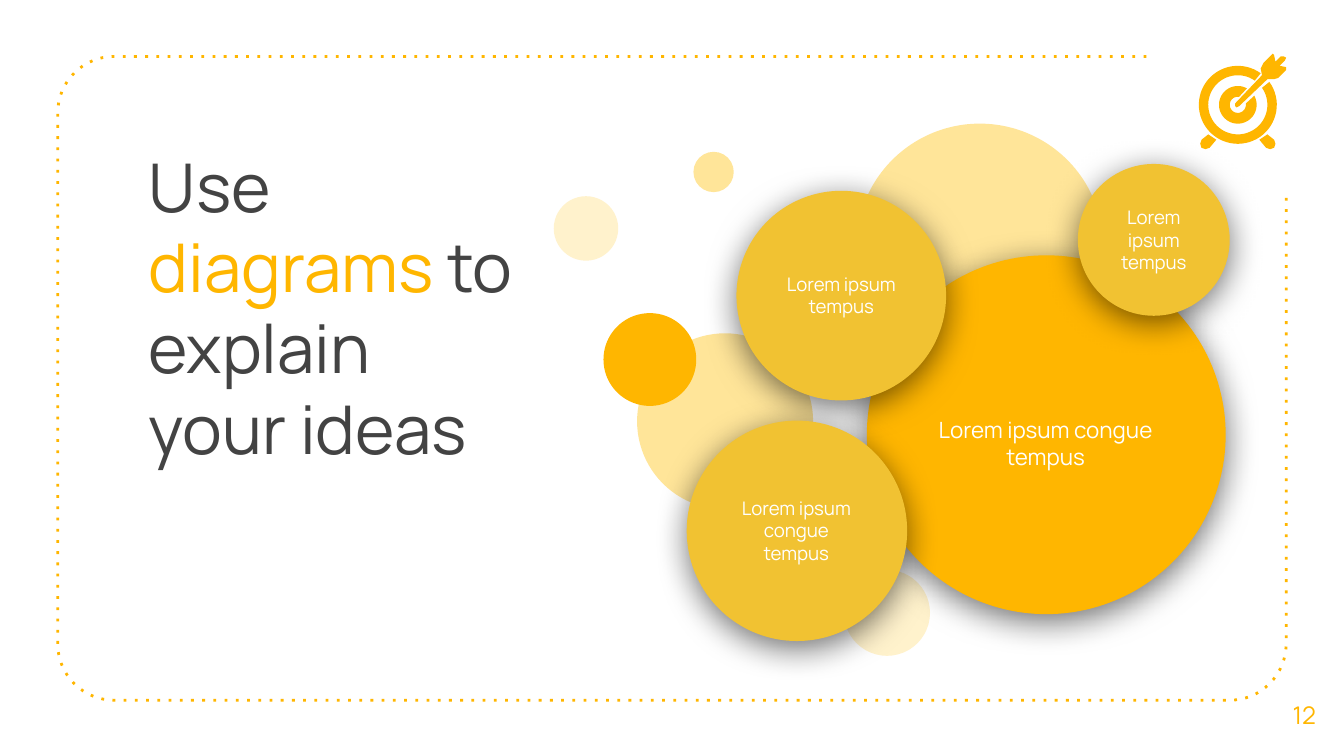
"""Build a slide with overlapping idea bubbles beside a title, inside a dotted frame."""
from dataclasses import dataclass
from math import cos, radians, sin

from lxml import etree
from pptx import Presentation
from pptx.dml.color import RGBColor
from pptx.enum.dml import MSO_LINE
from pptx.enum.shapes import MSO_SHAPE
from pptx.enum.text import MSO_ANCHOR, PP_ALIGN
from pptx.oxml.ns import qn
from pptx.shapes.autoshape import Shape
from pptx.shapes.shapetree import SlideShapes
from pptx.util import Inches, Pt

OVAL = MSO_SHAPE.OVAL
CENTER = PP_ALIGN.CENTER
LEFT = PP_ALIGN.LEFT
TOP = MSO_ANCHOR.TOP
MIDDLE = MSO_ANCHOR.MIDDLE
ROUND_DOT = MSO_LINE.ROUND_DOT

Point = tuple[float, float]


@dataclass(frozen=True)
class Theme:
    font: str = "Manrope"
    amber: str = "FFB600"
    gold: str = "F1C232"
    sand: str = "FFE599"
    cream: str = "FFF2CC"
    dark: str = "434343"
    white: str = "FFFFFF"
    shadow: str = "000000"
    title_size: int = 36
    number_size: int = 13
    large_label: int = 12
    small_label: int = 10


@dataclass(frozen=True)
class Area:
    left: float
    top: float
    width: float
    height: float


@dataclass(frozen=True)
class Span:
    text: str
    color: str


@dataclass(frozen=True)
class Circle:
    left: float
    top: float
    diameter: float
    color: str


@dataclass(frozen=True)
class Bubble:
    circle: Circle
    label: str
    label_area: Area
    label_size: int


@dataclass(frozen=True)
class Ring:
    outer: float
    inner: float
    outer_gap: float
    inner_gap: float


THEME = Theme()

BACKDROP = [
    Circle(6.28, 4.24, 0.64, THEME.cream),
    Circle(4.12, 1.46, 0.48, THEME.cream),
    Circle(4.74, 2.48, 1.31, THEME.sand),
    Circle(6.37, 0.92, 1.84, THEME.sand),
    Circle(4.49, 2.33, 0.69, THEME.amber),
    Circle(5.16, 1.13, 0.3, THEME.sand),
]
BUBBLES = [
    Bubble(Circle(6.45, 1.9, 2.67, THEME.amber), "Lorem ipsum congue tempus",
           Area(6.76, 2.66, 2.04, 1.27), THEME.large_label),
    Bubble(Circle(5.48, 1.42, 1.56, THEME.gold), "Lorem ipsum tempus",
           Area(5.73, 1.68, 1.06, 1.03), THEME.small_label),
    Bubble(Circle(5.11, 3.13, 1.64, THEME.gold), "Lorem ipsum congue tempus",
           Area(5.34, 3.43, 1.17, 1.03), THEME.small_label),
    Bubble(Circle(8.02, 1.22, 1.13, THEME.gold), "Lorem ipsum tempus",
           Area(8.2, 1.41, 0.77, 0.75), THEME.small_label),
]
TARGET_CENTER = (9.21, 0.78)
RINGS = [Ring(0.29, 0.22, 9, 10), Ring(0.14, 0.06, 16, 36)]
FOOT = [(8.99, 1), (8.94, 1.04), (8.93, 1.07), (8.94, 1.1), (8.97, 1.11),
        (9, 1.1), (9.05, 1.04), (9.02, 1.02)]
DART = [(9.47, 0.4), (9.46, 0.41), (9.4, 0.47), (9.38, 0.51), (9.39, 0.56),
        (9.19, 0.77), (9.19, 0.79), (9.2, 0.8), (9.22, 0.79), (9.43, 0.59),
        (9.48, 0.59), (9.51, 0.58), (9.57, 0.52), (9.57, 0.5), (9.52, 0.49),
        (9.56, 0.45), (9.57, 0.43), (9.55, 0.42), (9.53, 0.42), (9.49, 0.46),
        (9.48, 0.41)]


def arc(center: Point, radius: float, start: float, end: float, steps: int) -> list[Point]:
    angles = [radians(start + (end - start) * step / steps) for step in range(steps + 1)]
    return [(center[0] + radius * cos(angle), center[1] + radius * sin(angle)) for angle in angles]


def draw_outline(shapes: SlideShapes, points: list[Point], closed: bool) -> Shape:
    corners = [(Inches(x), Inches(y)) for x, y in points]
    builder = shapes.build_freeform(*corners[0])
    builder.add_line_segments(corners[1:], close=closed)
    outline = builder.convert_to_shape()
    outline.shadow.inherit = False
    return outline


def fill_plain(shape: Shape, color: str) -> None:
    shape.fill.solid()
    shape.fill.fore_color.rgb = RGBColor.from_string(color)
    shape.line.fill.background()


def draw_frame(shapes: SlideShapes) -> None:
    left, top, right, bottom, radius = 0.43, 0.42, 9.57, 5.21, 0.42
    points = [(8.53, top)]
    points += arc((left + radius, top + radius), radius, 270, 180, 16)
    points += arc((left + radius, bottom - radius), radius, 180, 90, 16)
    points += arc((right - radius, bottom - radius), radius, 90, 0, 16)
    points.append((right, 1.46))
    frame = draw_outline(shapes, points, closed=False)
    frame.fill.background()
    frame.line.color.rgb = RGBColor.from_string(THEME.amber)
    frame.line.width = Pt(1.5)
    frame.line.dash_style = ROUND_DOT
    frame.element.spPr.find(".//" + qn("a:prstDash")).set("val", "dot")


def draw_text(shapes: SlideShapes, area: Area, spans: list[Span], size: int,
              align: PP_ALIGN = CENTER, anchor: MSO_ANCHOR = MIDDLE) -> None:
    box = shapes.add_textbox(Inches(area.left), Inches(area.top),
                             Inches(area.width), Inches(area.height))
    frame = box.text_frame
    frame.word_wrap = True
    frame.vertical_anchor = anchor
    frame.margin_left = frame.margin_right = Inches(0.1)
    frame.margin_top = frame.margin_bottom = Inches(0.1)
    para = frame.paragraphs[0]
    para.alignment = align
    para.font.name = THEME.font
    para.font.size = Pt(size)
    for span in spans:
        run = para.add_run()
        run.text = span.text
        run.font.color.rgb = RGBColor.from_string(span.color)


def draw_circle(shapes: SlideShapes, circle: Circle) -> Shape:
    oval = shapes.add_shape(OVAL, Inches(circle.left), Inches(circle.top),
                            Inches(circle.diameter), Inches(circle.diameter))
    oval.shadow.inherit = False
    fill_plain(oval, circle.color)
    return oval


def add_shadow(shape: Shape) -> None:
    effects = shape.element.spPr.find(qn("a:effectLst"))
    shadow = etree.SubElement(effects, qn("a:outerShdw"), blurRad=str(Pt(18)),
                              dist=str(Pt(4)), dir="5400000", algn="bl", rotWithShape="0")
    color = etree.SubElement(shadow, qn("a:srgbClr"), val=THEME.shadow)
    etree.SubElement(color, qn("a:alpha"), val="55000")


def draw_target(shapes: SlideShapes) -> None:
    outlines = [
        arc(TARGET_CENTER, ring.outer, -45 - ring.outer_gap, -405 + ring.outer_gap, 60)
        + arc(TARGET_CENTER, ring.inner, -405 + ring.inner_gap, -45 - ring.inner_gap, 60)
        for ring in RINGS
    ]
    mirrored_foot = [(2 * TARGET_CENTER[0] - x, y) for x, y in FOOT]
    for points in [*outlines, FOOT, mirrored_foot, DART]:
        fill_plain(draw_outline(shapes, points, closed=True), THEME.amber)


def main() -> None:
    deck = Presentation()
    deck.slide_width = Inches(10)
    deck.slide_height = deck.slide_width * 9 // 16
    shapes = deck.slides.add_slide(deck.slide_layouts[6]).shapes
    draw_frame(shapes)
    title = [Span("Use ", THEME.dark), Span("diagrams", THEME.amber),
             Span(" to explain your ideas", THEME.dark)]
    draw_text(shapes, Area(1.01, 0.98, 2.97, 0.94), title, THEME.title_size, LEFT, TOP)
    draw_text(shapes, Area(9.41, 5.02, 0.59, 0.6), [Span("12", THEME.amber)], THEME.number_size)
    for circle in BACKDROP:
        draw_circle(shapes, circle)
    for bubble in BUBBLES:
        add_shadow(draw_circle(shapes, bubble.circle))
        draw_text(shapes, bubble.label_area, [Span(bubble.label, THEME.white)], bubble.label_size)
    draw_target(shapes)
    deck.save("out.pptx")


if __name__ == "__main__":
    main()
